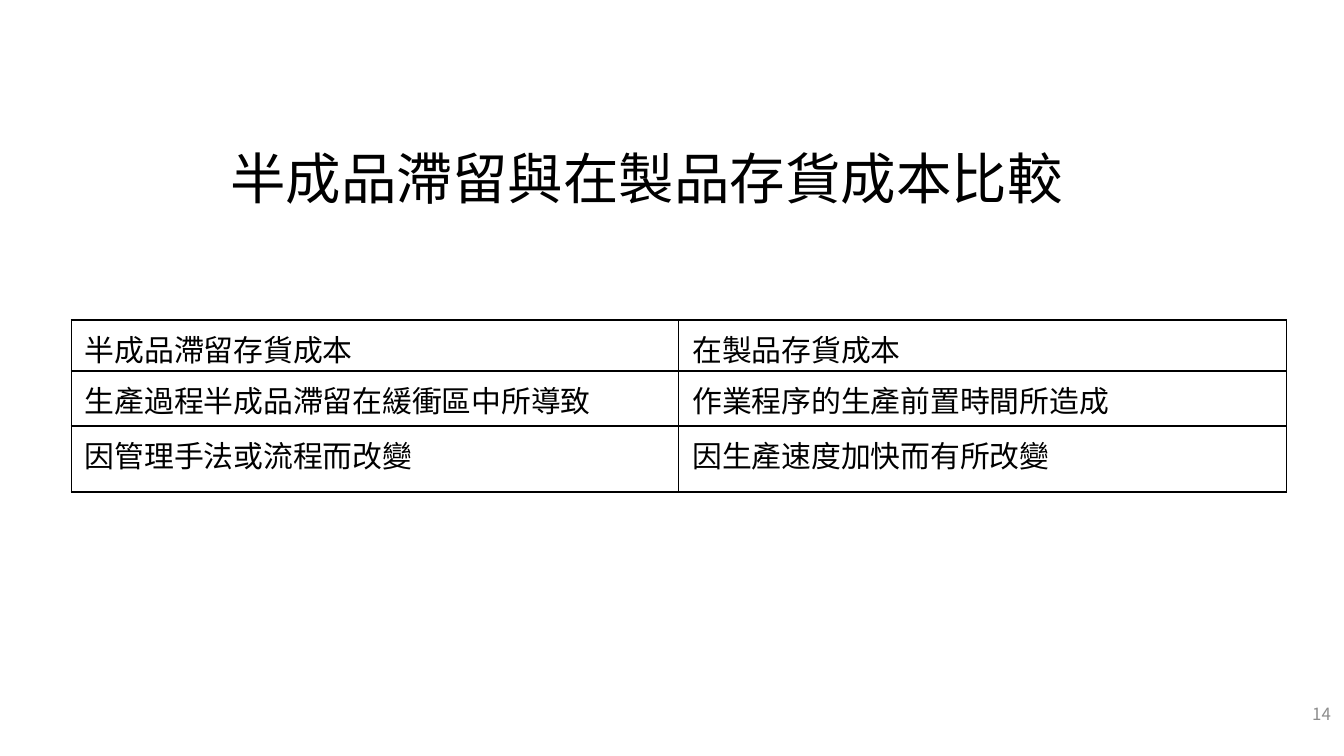
import lxml.etree
import pptx
import pptx.dml.color
import pptx.enum.text
import pptx.oxml.ns
import pptx.util

Pt = pptx.util.Pt
ALIGN = pptx.enum.text.PP_ALIGN
ANCHOR = pptx.enum.text.MSO_ANCHOR

BLACK = pptx.dml.color.RGBColor(0x00, 0x00, 0x00)
GRAY = pptx.dml.color.RGBColor(0x8C, 0x8C, 0x8C)
FONT = "Noto Sans CJK SC"

COMPARISON = [
    ("半成品滯留存貨成本", "在製品存貨成本"),
    ("生產過程半成品滯留在緩衝區中所導致", "作業程序的生產前置時間所造成"),
    ("因管理手法或流程而改變", "因生產速度加快而有所改變"),
]
ROW_HEIGHTS = (27.4, 29.5, 35.3)
COLUMN_WIDTH = 325.5


def add_child(parent, tag, **attributes):
    child = lxml.etree.SubElement(parent, pptx.oxml.ns.qn(tag))
    for key, value in attributes.items():
        child.set(key, value)
    return child


def write_text(frame, text, size, color, align):
    paragraph = frame.paragraphs[0]
    paragraph.alignment = align
    run = paragraph.add_run()
    run.text = text
    run.font.size = Pt(size)
    run.font.color.rgb = color
    run.font.name = FONT
    # East Asian glyphs take their own typeface setting
    add_child(run._r.get_or_add_rPr(), "a:ea", typeface=FONT)


def add_label(slide, box, text, size, color, align, anchor):
    frame = slide.shapes.add_textbox(*map(Pt, box)).text_frame
    layout = {"word_wrap": True, "vertical_anchor": anchor}
    layout.update({f"margin_{side}": Pt(7.2)
                   for side in ("left", "top", "right", "bottom")})
    for name, value in layout.items():
        setattr(frame, name, value)
    write_text(frame, text, size, color, align)


def outline_cell(cell):
    properties = cell._tc.get_or_add_tcPr()
    for position, tag in enumerate(("a:lnL", "a:lnR", "a:lnT", "a:lnB")):
        border = add_child(properties, tag, w=str(int(Pt(0.75))))
        fill = add_child(border, "a:solidFill")
        add_child(fill, "a:srgbClr", val=str(BLACK))
        properties.insert(position, border)


def add_comparison_table(slide, left, top):
    columns = len(COMPARISON[0])
    table = slide.shapes.add_table(
        len(COMPARISON), columns, Pt(left), Pt(top),
        Pt(COLUMN_WIDTH * columns), Pt(sum(ROW_HEIGHTS))).table
    for flag in ("first_row", "horz_banding"):
        setattr(table, flag, False)
    for row, height in zip(table.rows, ROW_HEIGHTS):
        row.height = Pt(height)
    for row, statements in zip(table.rows, COMPARISON):
        for cell, statement in zip(row.cells, statements):
            cell.fill.background()
            outline_cell(cell)
            write_text(cell.text_frame, statement, 16, BLACK, ALIGN.LEFT)


def main():
    deck = pptx.Presentation()
    deck.slide_width, deck.slide_height = Pt(720), Pt(405)
    slide = deck.slides.add_slide(deck.slide_layouts[6])
    add_label(slide, (94.3, 52.6, 504.7, 67.7), "半成品滯留與在製品存貨成本比較",
              29.7, BLACK, ALIGN.CENTER, ANCHOR.BOTTOM)
    add_label(slide, (675, 360, 45, 45), "14",
              9, GRAY, ALIGN.RIGHT, ANCHOR.MIDDLE)
    add_comparison_table(slide, 38.2, 171.4)
    deck.save("out.pptx")


if __name__ == "__main__":
    main()
